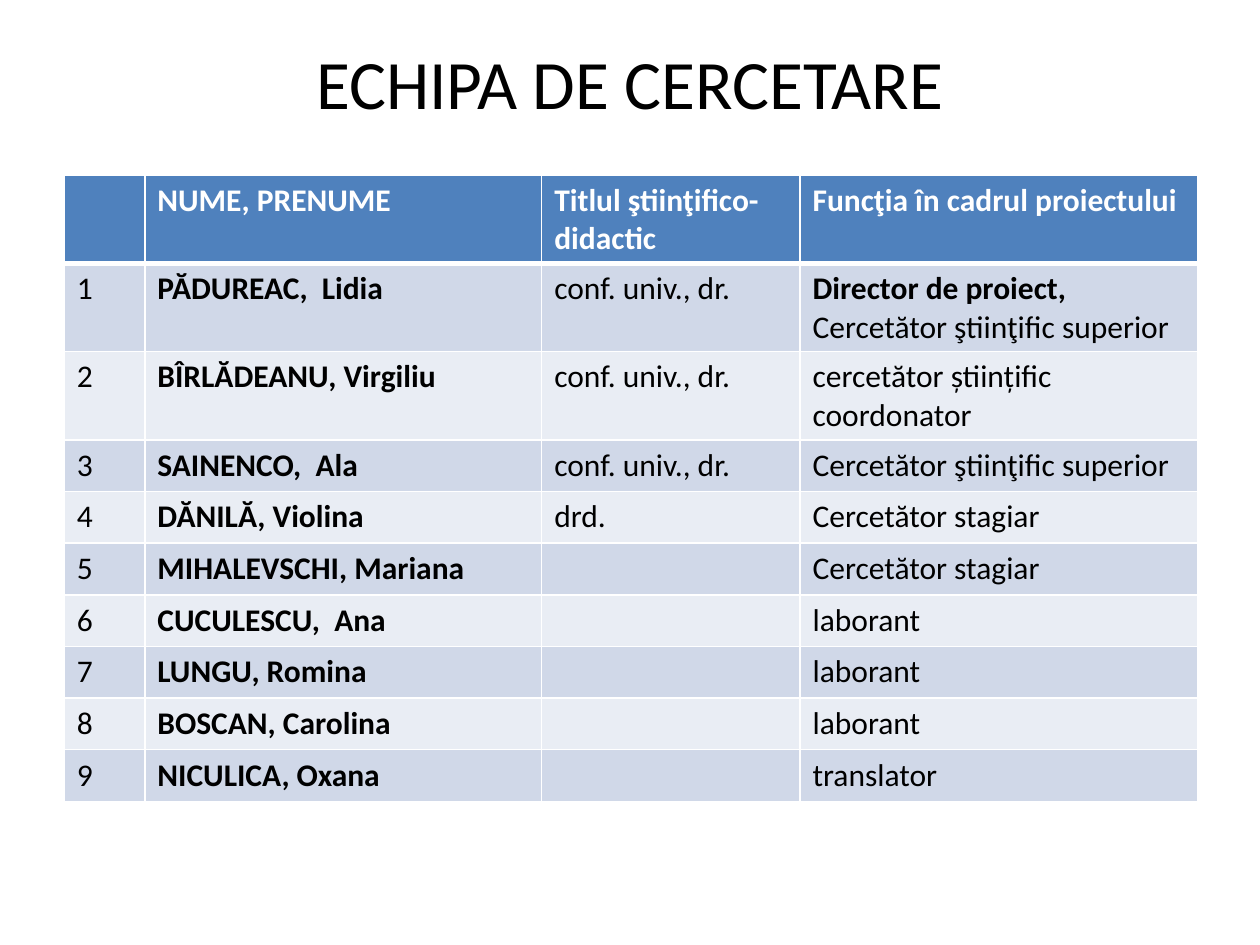
from lxml.etree import SubElement
from pptx import Presentation
from pptx.dml.color import RGBColor
from pptx.enum.text import MSO_ANCHOR, PP_ALIGN
from pptx.oxml.ns import qn
from pptx.util import Inches, Pt

# Content
TITLE = "ECHIPA DE CERCETARE"
HEADINGS = ("", "NUME, PRENUME", "Titlul ştiinţifico-didactic", "Funcţia în cadrul proiectului")
MEMBERS = [
    ("PĂDUREAC,  Lidia", "conf. univ., dr.", "Director de proiect,\nCercetător ştiinţific superior"),
    ("BÎRLĂDEANU, Virgiliu", "conf. univ., dr.", "cercetător științific coordonator"),
    ("SAINENCO,  Ala", "conf. univ., dr.", "Cercetător ştiinţific superior"),
    ("DĂNILĂ, Violina", "drd.", "Cercetător stagiar"),
    ("MIHALEVSCHI, Mariana", "", "Cercetător stagiar"),
    ("CUCULESCU,  Ana", "", "laborant"),
    ("LUNGU, Romina", "", "laborant"),
    ("BOSCAN, Carolina", "", "laborant"),
    ("NICULICA, Oxana", "", "translator"),
]
COLUMN_WIDTHS = (0.64, 3.15, 2.05, 3.16)
ROW_HEIGHT = 0.41
NAME_COLUMN = 1
LEAD_ROLE = "Director de proiect,"

THEME = {
    "font": "Calibri", "title_size": 39.6, "table_size": 18,
    "text": "000000", "header_text": "FFFFFF", "header": "4F81BD",
    "bands": ("D0D8E8", "E9EDF4"), "rule": "FFFFFF", "thin": 1, "thick": 3,
}


def style(paragraph, size, color, bold=False):
    font = paragraph.font
    font.name, font.size, font.bold = THEME["font"], Pt(size), bold
    font.color.rgb = RGBColor.from_string(color)


def add_borders(cell, top, bottom):
    properties = cell._tc.get_or_add_tcPr()
    widths = {"lnL": THEME["thin"], "lnR": THEME["thin"], "lnT": top, "lnB": bottom}
    for side, width in widths.items():
        line = SubElement(properties, qn(f"a:{side}"), w=str(Pt(width)))
        fill = SubElement(line, qn("a:solidFill"))
        SubElement(fill, qn("a:srgbClr"), val=THEME["rule"])


def fill_cell(cell, text, row, column):
    is_header = row == 0
    add_borders(cell,
                top=THEME["thick"] if row == 1 else THEME["thin"],
                bottom=THEME["thick"] if is_header else THEME["thin"])
    cell.fill.solid()
    background = THEME["header"] if is_header else THEME["bands"][(row - 1) % 2]
    cell.fill.fore_color.rgb = RGBColor.from_string(background)
    cell.text = text
    for paragraph in cell.text_frame.paragraphs:
        bold = is_header or column == NAME_COLUMN or paragraph.text == LEAD_ROLE
        style(paragraph, THEME["table_size"],
              THEME["header_text"] if is_header else THEME["text"], bold)


def main():
    presentation = Presentation()
    presentation.slide_width, presentation.slide_height = Inches(10), Inches(7.5)
    slide = presentation.slides.add_slide(presentation.slide_layouts[6])

    # Title
    title = slide.shapes.add_textbox(Inches(0.5), Inches(0.3), Inches(9), Inches(0.69)).text_frame
    title.word_wrap = True
    title.vertical_anchor = MSO_ANCHOR.MIDDLE
    title.text = TITLE
    title.paragraphs[0].alignment = PP_ALIGN.CENTER
    style(title.paragraphs[0], THEME["title_size"], THEME["text"])

    # Team table, members numbered from 1
    rows = [HEADINGS] + [(str(number), *member) for number, member in enumerate(MEMBERS, 1)]
    team = slide.shapes.add_table(
        len(rows), len(HEADINGS), Inches(0.51), Inches(1.39),
        Inches(sum(COLUMN_WIDTHS)), Inches(ROW_HEIGHT * len(rows))).table
    for column, width in zip(team.columns, COLUMN_WIDTHS):
        column.width = Inches(width)
    for row, texts in enumerate(rows):
        team.rows[row].height = Inches(ROW_HEIGHT)
        for column, text in enumerate(texts):
            fill_cell(team.cell(row, column), text, row, column)

    presentation.save("out.pptx")


if __name__ == "__main__":
    main()
